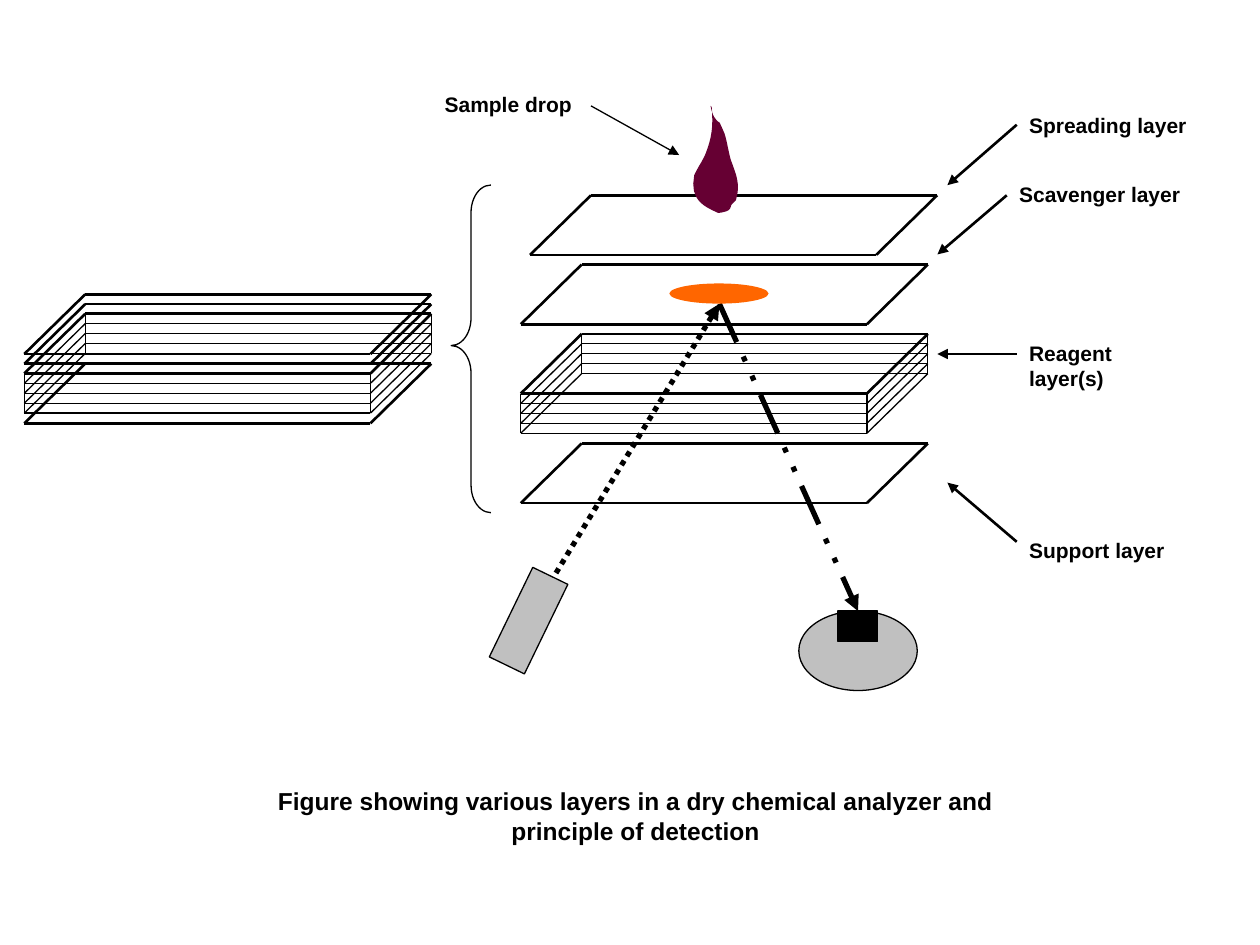
"""Build the slide on the layers of a dry chemical analyzer."""
import pptx
import pptx.dml.color
import pptx.enum.dml
import pptx.enum.shapes
import pptx.enum.text
import pptx.oxml.ns
import pptx.util
from lxml import etree

Pt = pptx.util.Pt
SHAPE = pptx.enum.shapes.MSO_SHAPE
DASH = pptx.enum.dml.MSO_LINE
BLACK, GREY, ORANGE, PLUM = "000000", "C0C0C0", "FF6600", "660033"
SHEET_WIDTH, SHEET_SKEW, SHEET_DEPTH = 197.8, 34.8, 34.1
REAGENT_STEP, REAGENT_COUNT = 5.67, 4
THIN, BOLD, BEAM = 0.75, 1.5, 3

DROP_START = (406.8, 61.9)
DROP_CURVES = [
    ((407.5, 72.7), (406.8, 78.5), (403.2, 87.8)),
    ((401.8, 91.4), (399.6, 94.3), (398.2, 97.2)),
    ((397.4, 98.6), (396.7, 100.1), (396.7, 100.1)),
    ((393.8, 114.5), (402.5, 118.1), (410.4, 121.7)),
    ((411.1, 121.7), (416.2, 121), (416.9, 119.5)),
    ((417.6, 118.8), (417.6, 117.4), (418.3, 116.6)),
    ((419, 115.9), (419.8, 115.2), (420.5, 114.5)),
    ((423.4, 105.1), (420.5, 99.4), (417.6, 91.4)),
    ((416.2, 86.4), (415.4, 80.6), (414, 76.3)),
    ((409, 64.8), (412.6, 73.4), (408.2, 67)),
    ((407.5, 66.2), (406.1, 61.9), (406.1, 60.5)),
    ((406.1, 60.5), (406.8, 61.2), (406.8, 61.9)),
]

LABELS = [
    ("Sample drop", (247, 49), (337.7, 60.5), (388.1, 88.6), THIN),
    ("Spreading layer", (581, 60.5), (581, 71.3), (541.4, 105.8), BOLD),
    ("Scavenger layer", (575.3, 100.1), (575.3, 111.6), (535.7, 145.4), BOLD),
    ("Reagent layer(s)", (581, 190.8), (581, 202.3), (535.7, 202.3), BOLD),
    ("Support layer", (581, 303.8), (581, 309.6), (541.4, 275.8), BOLD),
]


def colour(value):
    """Turn a hex string into a colour."""
    return pptx.dml.color.RGBColor.from_string(value)


def add_line(shapes, start, end, weight, dash=None, arrow=False):
    """Draw a black line, with an arrowhead at its end on request."""
    line = shapes.add_connector(
        pptx.enum.shapes.MSO_CONNECTOR.STRAIGHT, *map(Pt, start + end))
    line.line.color.rgb = colour(BLACK)
    line.line.width = Pt(weight)
    if dash is not None:
        line.line.dash_style = dash
    properties = line._element.spPr
    qn = pptx.oxml.ns.qn
    if arrow:
        etree.SubElement(properties.find(qn("a:ln")), qn("a:tailEnd"), type="triangle")
    etree.SubElement(properties, qn("a:effectLst"))


def paint(shape, fill=None, outlined=True):
    """Give a shape its fill and outline, without a shadow."""
    shape.shadow.inherit = False
    if fill:
        shape.fill.solid()
        shape.fill.fore_color.rgb = colour(fill)
    else:
        shape.fill.background()
    if outlined:
        shape.line.color.rgb = colour(BLACK)
        shape.line.width = Pt(THIN)
    else:
        shape.line.fill.background()


def add_part(shapes, kind, box, fill=None, outlined=True):
    """Add a painted preset shape and return it."""
    part = shapes.add_shape(kind, *map(Pt, box))
    paint(part, fill, outlined)
    return part


def set_text(frame, text, size):
    """Fill a text frame with bold black Arial and return its paragraph."""
    frame.text = text
    paragraph = frame.paragraphs[0]
    paragraph.font.name = "Arial"
    paragraph.font.size = Pt(size)
    paragraph.font.bold = True
    paragraph.font.color.rgb = colour(BLACK)
    return paragraph


def sheet_corners(left, top):
    """Return the corners of a sheet, clockwise from its back left."""
    right, front = left + SHEET_WIDTH, top + SHEET_DEPTH
    return [(left, top), (right, top),
            (right - SHEET_SKEW, front), (left - SHEET_SKEW, front)]


def add_sheet(shapes, left, top, weight=BOLD):
    """Outline one slanted sheet."""
    corners = sheet_corners(left, top)
    for start, end in zip(corners, corners[1:] + corners[:1]):
        add_line(shapes, start, end, weight)


def add_reagents(shapes, left, top):
    """Draw the reagent layers as a pile of sheets with upright edges."""
    add_sheet(shapes, left, top)
    for level in range(1, REAGENT_COUNT + 1):
        add_sheet(shapes, left, top + level * REAGENT_STEP, THIN)
    for x, y in sheet_corners(left, top):
        add_line(shapes, (x, y), (x, y + REAGENT_COUNT * REAGENT_STEP), THIN)


def add_analyzer(shapes, spreading, scavenger, reagents, support):
    """Draw the four kinds of layer, each as a group."""
    for corner in (spreading, scavenger, support):
        add_sheet(shapes.add_group_shape().shapes, *corner)
    add_reagents(shapes.add_group_shape().shapes, *reagents)


def add_drop(shapes):
    """Draw the sample drop by sampling its Bézier outline."""
    start, outline, steps = DROP_START, [], 8
    for first, second, end in DROP_CURVES:
        for step in range(1, steps + 1):
            t = step / steps
            u = 1 - t
            outline.append(tuple(
                100 * (u**3 * a + 3 * u * u * t * b + 3 * u * t * t * c + t**3 * d)
                for a, b, c, d in zip(start, first, second, end)))
        start = end
    builder = shapes.build_freeform(
        100 * DROP_START[0], 100 * DROP_START[1], scale=Pt(1) / 100)
    builder.add_line_segments(outline, close=True)
    paint(builder.convert_to_shape(), PLUM, outlined=False)


def add_label(shapes, text, corner, start, target, weight):
    """Add a layer name and the arrow to what it names."""
    label = shapes.add_textbox(*map(Pt, corner + (107, 21.8)))
    label.text_frame.word_wrap = False
    set_text(label.text_frame, text, 12)
    add_line(shapes, start, target, weight, arrow=True)


def add_detection(shapes):
    """Draw the light source, the beams and the detector."""
    spot = (411.1, 173.6)
    add_line(shapes, (314.6, 332.6), spot, BEAM, DASH.ROUND_DOT, True)
    add_line(shapes, spot, (490.3, 349.2), BEAM, DASH.DASH_DOT_DOT, True)
    source = add_part(shapes, SHAPE.RECTANGLE, (290.9, 326.2, 22.3, 56.9), GREY)
    source.rotation = 25.9
    add_part(shapes, SHAPE.OVAL, (456.5, 349.2, 67.7, 45.4), GREY)
    add_part(shapes, SHAPE.RECTANGLE, (478.8, 349.2, 22.7, 17.3), BLACK)
    add_part(shapes, SHAPE.OVAL, (382.5, 162, 56.7, 11.5), ORANGE, outlined=False)


def add_caption(title):
    """Place the figure caption in the title placeholder."""
    title.left, title.top, title.width, title.height = map(Pt, (150.5, 445.7, 425.5, 41))
    frame = title.text_frame
    frame.word_wrap = True
    frame.auto_size = pptx.enum.text.MSO_AUTO_SIZE.NONE
    frame.vertical_anchor = pptx.enum.text.MSO_ANCHOR.TOP
    paragraph = set_text(
        frame, "Figure showing various layers in a dry chemical analyzer "
        "and principle of detection", 14)
    paragraph.alignment = pptx.enum.text.PP_ALIGN.CENTER


def main():
    """Build and save the slide."""
    deck = pptx.Presentation()
    deck.slide_width, deck.slide_height = Pt(720), Pt(540)
    slide = deck.slides.add_slide(deck.slide_layouts[5])
    shapes = slide.shapes
    add_caption(shapes.title)
    add_analyzer(shapes, (337.7, 111.6), (332.4, 151.2), (332.4, 190.8), (332.4, 253.4))
    add_analyzer(shapes, (48.7, 168.2), (48.7, 173.8), (48.7, 179.3), (48.7, 207.8))
    brace = add_part(shapes, SHAPE.LEFT_BRACE, (257.8, 105.8, 22.7, 187.2))
    brace.adjustments[0], brace.adjustments[1] = 0.69, 0.49
    add_detection(shapes)
    add_drop(shapes)
    for label in LABELS:
        add_label(shapes, *label)
    deck.save("out.pptx")


if __name__ == "__main__":
    main()
